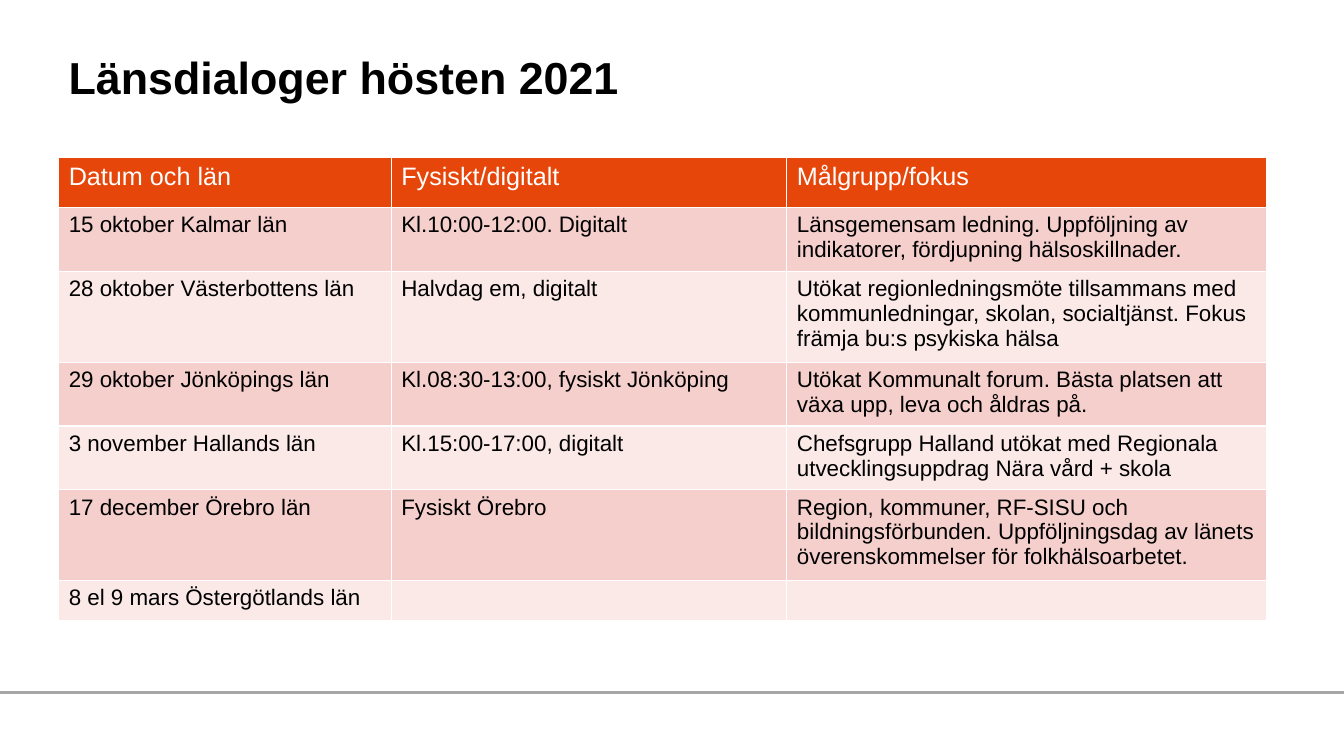
import pptx
import pptx.util
import pptx.dml.color
import pptx.enum.shapes
import pptx.enum.text
from lxml import etree
from pptx.util import Cm, Pt

NS = "http://schemas.openxmlformats.org/drawingml/2006/main"
HUES = {
    "head": "E6460A",
    "odd": "F5CFCC",
    "even": "FAE9E7",
    "white": "FFFFFF",
    "black": "000000",
    "rule": "A6A6A6",
}
ROWS = [
    ("Datum och län", "Fysiskt/digitalt", "Målgrupp/fokus"),
    ("15 oktober Kalmar län", "Kl.10:00-12:00. Digitalt",
     "Länsgemensam ledning. Uppföljning av indikatorer, fördjupning hälsoskillnader."),
    ("28 oktober Västerbottens län", "Halvdag em, digitalt",
     "Utökat regionledningsmöte tillsammans med kommunledningar, skolan, "
     "socialtjänst. Fokus främja bu:s psykiska hälsa"),
    ("29 oktober Jönköpings län", "Kl.08:30-13:00, fysiskt Jönköping",
     "Utökat Kommunalt forum. Bästa platsen att växa upp, leva och åldras på."),
    ("3 november Hallands län", "Kl.15:00-17:00, digitalt",
     "Chefsgrupp Halland utökat med Regionala utvecklingsuppdrag Nära vård + skola"),
    ("17 december Örebro län", "Fysiskt Örebro",
     "Region, kommuner, RF-SISU och bildningsförbunden. Uppföljningsdag av länets "
     "överenskommelser för folkhälsoarbetet."),
    ("8 el 9 mars Östergötlands län", "", ""),
]


def hue(name):
    return pptx.dml.color.RGBColor.from_string(HUES[name])


def style(para, size, name, bold=False):
    para.font.name = "Arial"
    para.font.size = Pt(size)
    para.font.bold = bold
    para.font.color.rgb = hue(name)


deck = pptx.Presentation()
deck.slide_width = Cm(33.87)
deck.slide_height = Cm(19.05)
slide = deck.slides.add_slide(deck.slide_layouts[6])

# Footer rule
rule = slide.shapes.add_connector(
    pptx.enum.shapes.MSO_CONNECTOR.STRAIGHT, 0, Cm(17.45), deck.slide_width, Cm(17.45))
rule.line.color.rgb = hue("rule")
rule.line.width = Pt(1.5)
etree.SubElement(rule._element.spPr, f"{{{NS}}}effectLst")

# Title
title = slide.shapes.add_textbox(Cm(1.48), Cm(1.27), Cm(26.7), Cm(1.45))
frame = title.text_frame
frame.word_wrap = True
frame.vertical_anchor = pptx.enum.text.MSO_ANCHOR.BOTTOM
frame.text = "Länsdialoger hösten 2021"
frame.paragraphs[0].line_spacing = 0.8
style(frame.paragraphs[0], 32, "black", True)

# Table of dialogues
widths = [8.38, 9.97, 12.08]
heights = [1.26] + [1.02] * (len(ROWS) - 1)
table = slide.shapes.add_table(
    len(ROWS), len(widths), Cm(1.48), Cm(3.97), Cm(sum(widths)), Cm(sum(heights))).table
for col, width in zip(table.columns, widths):
    col.width = Cm(width)
for r, (texts, height) in enumerate(zip(ROWS, heights)):
    table.rows[r].height = Cm(height)
    fill = "head" if r == 0 else "odd" if r % 2 else "even"
    for c, text in enumerate(texts):
        cell = table.cell(r, c)
        cell.text = text
        style(cell.text_frame.paragraphs[0], 16 if r else 18, "black" if r else "white")
        props = cell._tc.get_or_add_tcPr()
        for side in ("lnL", "lnR", "lnT", "lnB"):
            edge = etree.SubElement(props, f"{{{NS}}}{side}", w=str(Pt(1)))
            solid = etree.SubElement(edge, f"{{{NS}}}solidFill")
            etree.SubElement(solid, f"{{{NS}}}srgbClr", val=HUES["white"])
        cell.fill.solid()
        cell.fill.fore_color.rgb = hue(fill)

deck.save("out.pptx")
